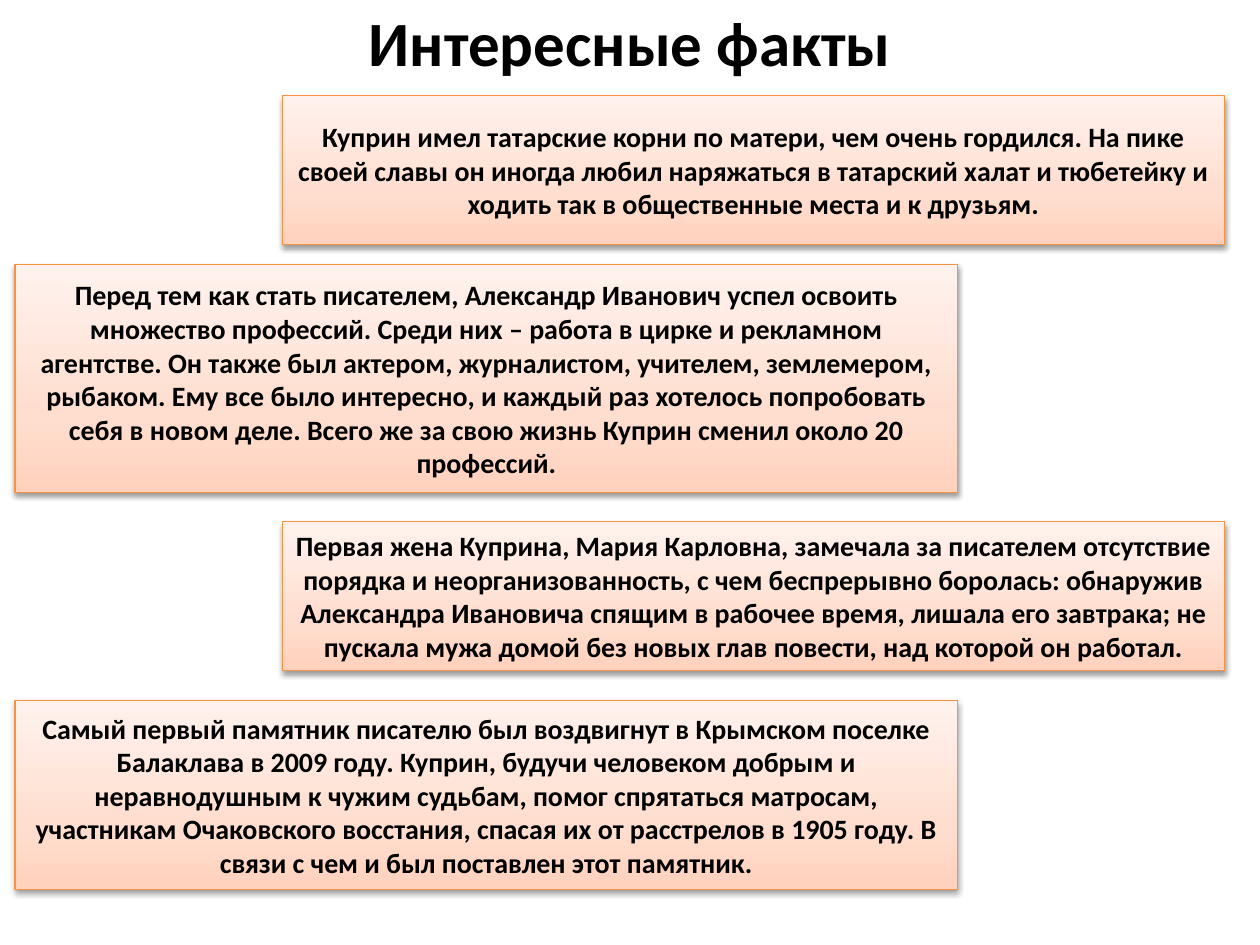
import copy

import lxml.etree
import pptx
import pptx.dml.color
import pptx.enum.shapes
import pptx.enum.text
import pptx.oxml.ns
import pptx.util

Inches = pptx.util.Inches
RGBColor = pptx.dml.color.RGBColor
qn = pptx.oxml.ns.qn

BLACK = RGBColor(0x00, 0x00, 0x00)
ORANGE = RGBColor(0xF6, 0x92, 0x40)
PEACH = RGBColor(0xFF, 0xD2, 0xBD)
LIGHT_PEACH = RGBColor(0xFF, 0xDE, 0xD0)
PALE_PEACH = RGBColor(0xFF, 0xF2, 0xED)

GRADIENT = [(0, PEACH), (0.35, LIGHT_PEACH), (1, PALE_PEACH)]
LEFT, RIGHT = 0.12, 2.24
FACT_WIDTH = 7.48
FACTS = [
    (RIGHT, 0.76, 1.18, "Куприн имел татарские корни по матери, чем очень гордился. На пике своей славы он иногда любил наряжаться в татарский халат и тюбетейку и ходить так в общественные места и к друзьям."),
    (LEFT, 2.1, 1.81, "Перед тем как стать писателем, Александр Иванович успел освоить множество профессий. Среди них – работа в цирке и рекламном агентстве. Он также был актером, журналистом, учителем, землемером, рыбаком. Ему все было интересно, и каждый раз хотелось попробовать себя в новом деле. Всего же за свою жизнь Куприн сменил около 20 профессий."),
    (RIGHT, 4.14, 1.18, "Первая жена Куприна, Мария Карловна, замечала за писателем отсутствие порядка и неорганизованность, с чем беспрерывно боролась: обнаружив Александра Ивановича спящим в рабочее время, лишала его завтрака; не пускала мужа домой без новых глав повести, над которой он работал."),
    (LEFT, 5.56, 1.5, "Самый первый памятник писателю был воздвигнут в Крымском поселке Балаклава в 2009 году. Куприн, будучи человеком добрым и неравнодушным к чужим судьбам, помог спрятаться матросам, участникам Очаковского восстания, спасая их от расстрелов в 1905 году. В связи с чем и был поставлен этот памятник."),
]


def write_text(shape, text, size):
    frame = shape.text_frame
    frame.word_wrap = True
    frame.vertical_anchor = pptx.enum.text.MSO_ANCHOR.MIDDLE
    paragraph = frame.paragraphs[0]
    paragraph.alignment = pptx.enum.text.PP_ALIGN.CENTER
    run = paragraph.add_run()
    run.text = text
    font_format = {"name": "Calibri", "size": pptx.util.Pt(size), "bold": True}
    for attribute, value in font_format.items():
        setattr(run.font, attribute, value)
    run.font.color.rgb = BLACK


def add_shadow(shape):
    shape.shadow.inherit = False
    effects = shape._element.spPr.find(qn("a:effectLst"))
    shadow = lxml.etree.SubElement(
        effects, qn("a:outerShdw"), blurRad="40000", dist="20000",
        dir="5400000", rotWithShape="0")
    color = lxml.etree.SubElement(shadow, qn("a:srgbClr"), val=str(BLACK))
    lxml.etree.SubElement(color, qn("a:alpha"), val="38000")


presentation = pptx.Presentation()
presentation.slide_width = Inches(10)
presentation.slide_height = Inches(7.5)
slide = presentation.slides.add_slide(presentation.slide_layouts[6])

title = slide.shapes.add_textbox(
    Inches(0.51), Inches(0.05), Inches(8.98), Inches(0.55))
write_text(title, "Интересные факты", 36)

for left, top, height, text in FACTS:
    fact = slide.shapes.add_shape(
        pptx.enum.shapes.MSO_SHAPE.RECTANGLE,
        Inches(left), Inches(top), Inches(FACT_WIDTH), Inches(height))
    fact.fill.gradient()
    fact.fill.gradient_angle = 90
    stop_list = fact._element.spPr.find(".//" + qn("a:gsLst"))
    stop_list.append(copy.deepcopy(stop_list[0]))
    for stop, (position, color) in zip(fact.fill.gradient_stops, GRADIENT):
        stop.position = position
        stop.color.rgb = color
    fact.line.color.rgb = ORANGE
    fact.line.width = pptx.util.Pt(0.75)
    add_shadow(fact)
    write_text(fact, text, 16)

presentation.save("out.pptx")
